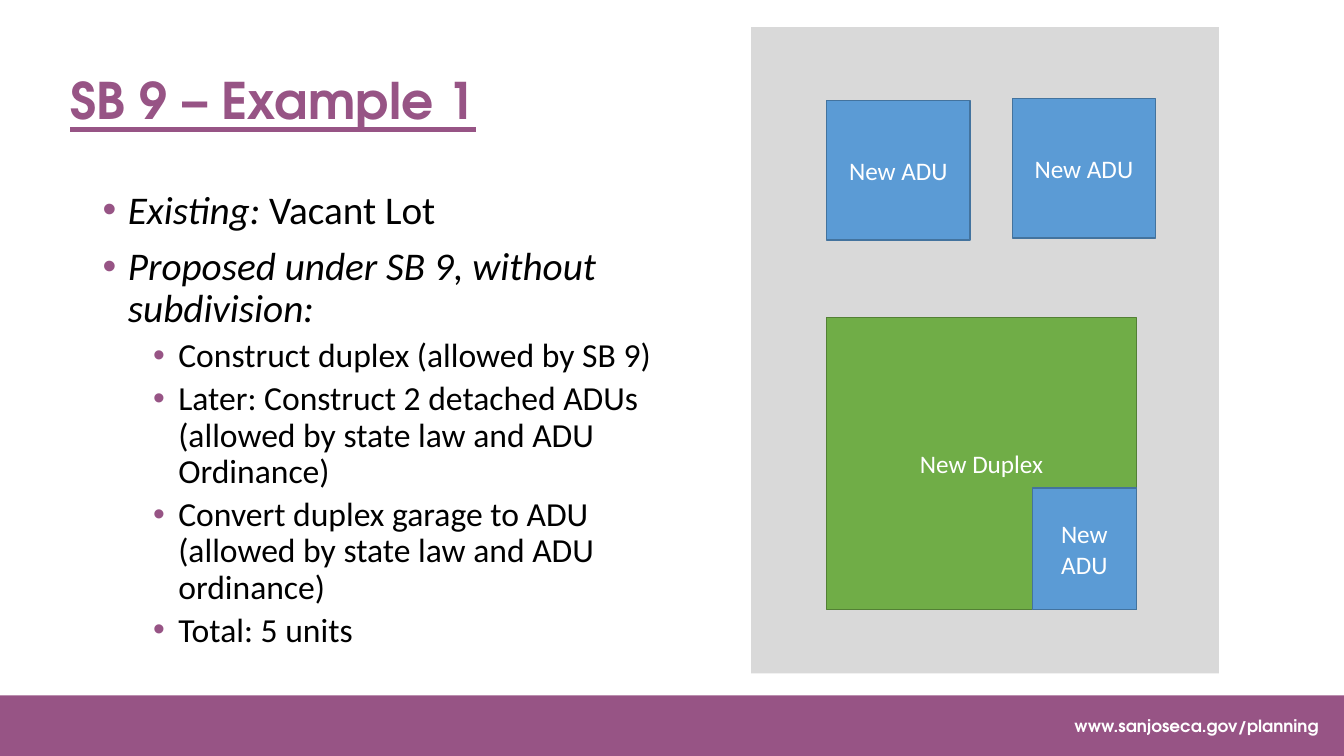
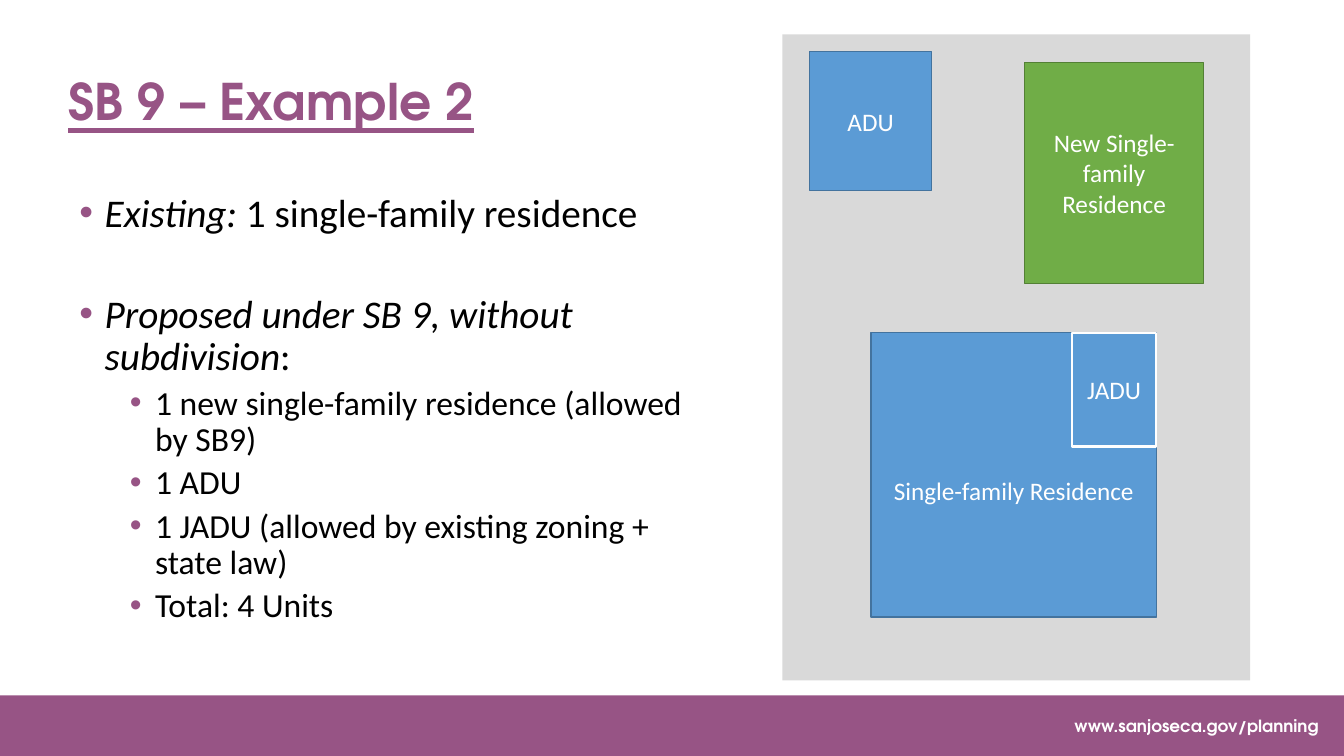
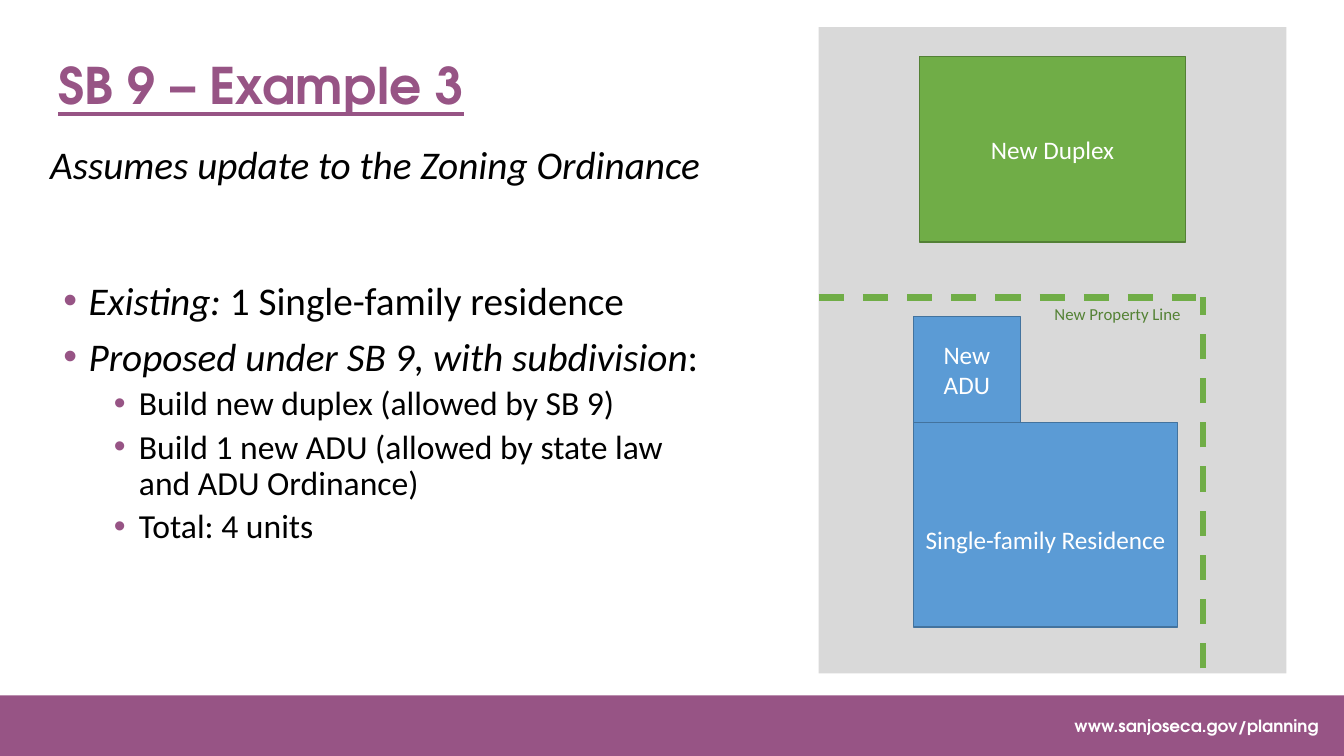
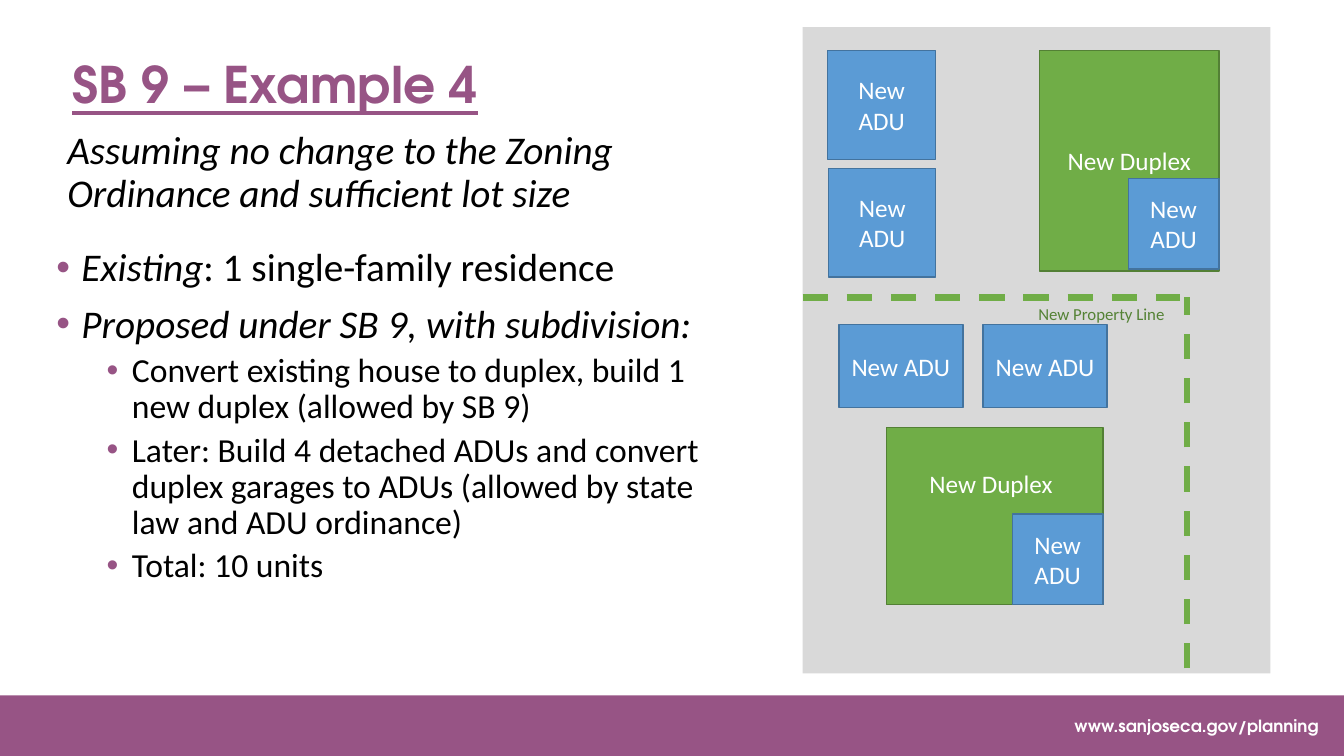
from dataclasses import dataclass

from lxml.etree import SubElement
from pptx import Presentation
from pptx.dml.color import RGBColor
from pptx.enum.dml import MSO_LINE
from pptx.enum.shapes import MSO_CONNECTOR, MSO_SHAPE
from pptx.enum.text import MSO_ANCHOR, PP_ALIGN
from pptx.oxml.ns import qn
from pptx.util import Emu, Pt

EMU_PER_PX = 9144  # 100 px to the inch
SLIDE_WIDTH, SLIDE_HEIGHT = 1333, 750
LOT_WIDTH, LOT_HEIGHT = 464, 641
TITLE_WIDTH, TITLE_HEIGHT = 464, 105
BAND_HEIGHT = 60


@dataclass(frozen=True)
class Theme:
    heading_font: str = "TeX Gyre Adventor"
    body_font: str = "Calibri"
    purple: str = "975485"
    white: str = "FFFFFF"
    black: str = "000000"
    lot: str = "D9D9D9"
    blue: str = "5B9BD5"
    blue_edge: str = "43739E"
    green: str = "70AD47"
    green_edge: str = "538035"
    green_text: str = "548235"
    title_size: int = 36
    level_sizes: tuple = (28, 24)
    label_size: int = 18
    small_size: int = 12


def px(length):
    return Emu(length * EMU_PER_PX)


def box(left, top, width, height):
    return px(left), px(top), px(width), px(height)


class Deck:
    def __init__(self, theme):
        self.theme = theme
        self.presentation = Presentation()
        self.presentation.slide_width = px(SLIDE_WIDTH)
        self.presentation.slide_height = px(SLIDE_HEIGHT)
        self.slide = None

    def start(self, title, title_at, lot_at):
        """Add a slide with its title, footer band and empty lot."""
        theme = self.theme
        layout = self.presentation.slide_layouts[6]
        self.slide = self.presentation.slides.add_slide(layout)
        heading = self.text(title, (*title_at, TITLE_WIDTH, TITLE_HEIGHT),
                            theme.title_size, theme.purple, theme.heading_font)
        heading.font.bold = heading.font.underline = True
        heading.line_spacing = 0.9
        self.slide.shapes[-1].text_frame.vertical_anchor = MSO_ANCHOR.MIDDLE

        self.rectangle((0, SLIDE_HEIGHT - BAND_HEIGHT, SLIDE_WIDTH, BAND_HEIGHT), theme.purple)
        footer = self.text("www.sanjoseca.gov/planning", (1005, 705, 313, 30),
                           theme.small_size, theme.white, theme.heading_font)
        footer.font.bold = True
        footer.alignment = PP_ALIGN.RIGHT
        self.rectangle((*lot_at, LOT_WIDTH, LOT_HEIGHT), theme.lot)

    def style(self, paragraph, size, colour, font_name=None):
        font = paragraph.font
        font.name = font_name or self.theme.body_font
        font.size = Pt(size)
        font.color.rgb = RGBColor.from_string(colour)

    def text(self, words, area, size, colour, font_name=None):
        frame = self.slide.shapes.add_textbox(*box(*area)).text_frame
        frame.word_wrap = True
        paragraph = frame.paragraphs[0]
        paragraph.text = words
        self.style(paragraph, size, colour, font_name)
        return paragraph

    def rectangle(self, area, fill, edge=None, edge_width=1):
        shape = self.slide.shapes.add_shape(MSO_SHAPE.RECTANGLE, *box(*area))
        shape.shadow.inherit = False
        shape.fill.solid()
        shape.fill.fore_color.rgb = RGBColor.from_string(fill)
        if edge:
            shape.line.color.rgb = RGBColor.from_string(edge)
            shape.line.width = Pt(edge_width)
        else:
            shape.line.fill.background()
        return shape

    def building(self, words, area, fill, edge, edge_width=1, lowered=0):
        """Draw a labelled building; lowered adds space above its label."""
        shape = self.rectangle(area, fill, edge, edge_width)
        frame = shape.text_frame
        frame.word_wrap = True
        frame.vertical_anchor = MSO_ANCHOR.MIDDLE
        frame.margin_top = px(5 + lowered)
        paragraph = frame.paragraphs[0]
        paragraph.text = words
        paragraph.alignment = PP_ALIGN.CENTER
        self.style(paragraph, self.theme.label_size, self.theme.white)

    def blue_building(self, words, *area, lowered=0):
        self.building(words, area, self.theme.blue, self.theme.blue_edge, lowered=lowered)

    def green_building(self, words, *area):
        self.building(words, area, self.theme.green, self.theme.green_edge)

    def assumption(self, words, area):
        paragraph = self.text(words, area, self.theme.level_sizes[0], self.theme.black)
        paragraph.font.italic = True
        paragraph.line_spacing = 0.9

    def bullets(self, area, existing, proposed, details, gap=10):
        """Write two main points, each an (italic, upright) pair, then the details."""
        frame = self.slide.shapes.add_textbox(*box(*area)).text_frame
        frame.word_wrap = True
        points = [(0, 10, *existing), (0, gap, *proposed)]
        points += [(1, 5, "", detail) for detail in details]
        for index, (level, space, italic, upright) in enumerate(points):
            paragraph = frame.add_paragraph() if index else frame.paragraphs[0]
            paragraph.level = level
            paragraph.line_spacing = 0.9
            paragraph.space_before = Pt(space)
            self.style(paragraph, self.theme.level_sizes[level], self.theme.black)
            self.add_bullet(paragraph, 25 + 50 * level)
            for words, slanted in ((italic, True), (upright, False)):
                if words:
                    run = paragraph.add_run()
                    run.text = words
                    run.font.italic = slanted

    def add_bullet(self, paragraph, indent):
        properties = paragraph._p.get_or_add_pPr()
        properties.set("marL", str(px(indent)))
        properties.set("indent", str(px(-25)))
        colour = properties.makeelement(qn("a:buClr"), {})
        SubElement(colour, qn("a:srgbClr"), val=self.theme.purple)
        font = properties.makeelement(qn("a:buFont"), {"typeface": "Arial"})
        character = properties.makeelement(qn("a:buChar"), {"char": "•"})
        defaults = properties.find(qn("a:defRPr"))
        for element in (colour, font, character):
            defaults.addprevious(element)

    def dashed_line(self, *ends):
        line = self.slide.shapes.add_connector(MSO_CONNECTOR.STRAIGHT, *map(px, ends))
        line.line.color.rgb = RGBColor.from_string(self.theme.green)
        line.line.width = Pt(4.5)
        line.line.dash_style = MSO_LINE.DASH
        SubElement(line._element.spPr, qn("a:effectLst"))

    def property_line(self, lot_left):
        corner = lot_left + 381
        self.dashed_line(lot_left, 295, corner - 7, 295)
        self.dashed_line(corner, 663, corner, 295)
        self.text("New Property Line", (lot_left + 224, 296, 155, 30),
                  self.theme.small_size, self.theme.green_text)


def vacant_lot(deck):
    deck.start("SB 9 – Example 1", (60, 50), (745, 27))
    deck.bullets((92, 184, 575, 476),
                 ("Existing:", " Vacant Lot"),
                 ("Proposed under SB 9, without subdivision:", ""),
                 ["Construct duplex (allowed by SB 9)",
                  "Later: Construct 2 detached ADUs (allowed by state law and ADU Ordinance)",
                  "Convert duplex garage to ADU (allowed by state law and ADU ordinance)",
                  "Total: 5 units"])
    deck.green_building("New Duplex", 820, 315, 307, 290)
    deck.blue_building("New ADU", 820, 100, 142, 138)
    deck.blue_building("New ADU", 1004, 98, 142, 138)
    deck.blue_building("New ADU", 1024, 484, 103, 121)


def added_residence(deck):
    theme = deck.theme
    deck.start("SB 9 – Example 2", (58, 51), (776, 34))
    deck.blue_building("Single-family Residence", 864, 330, 283, 282, lowered=30)
    deck.building("JADU", (1063, 330, 84, 113), theme.blue, theme.white, 1.5)
    deck.blue_building("ADU", 803, 51, 121, 138)
    deck.green_building("New Single-family Residence", 1016, 62, 178, 219)
    deck.bullets((69, 187, 636, 473),
                 ("Existing:", " 1 single-family residence"),
                 ("Proposed under SB 9, without subdivision", ":"),
                 ["1 new single-family residence (allowed by SB9)",
                  "1 ADU",
                  "1 JADU (allowed by existing zoning + state law)",
                  "Total: 4 Units"],
                 gap=42)


def subdivision_with_update(deck):
    lot_left = 812
    deck.start("SB 9 – Example 3", (48, 35), (lot_left, 27))
    deck.blue_building("Single-family Residence", 906, 419, 262, 203, lowered=30)
    deck.green_building("New Duplex", 912, 56, 264, 184)
    deck.bullets((53, 274, 658, 416),
                 ("Existing:", " 1 Single-family residence"),
                 ("Proposed under SB 9, with subdivision", ":"),
                 ["Build new duplex (allowed by SB 9)",
                  "Build 1 new ADU (allowed by state law and ADU Ordinance)",
                  "Total: 4 units"])
    deck.blue_building("New ADU", 906, 314, 106, 105)
    deck.property_line(lot_left)
    deck.assumption("Assumes update to the Zoning Ordinance", (40, 140, 730, 105))


def subdivision_without_change(deck):
    lot_left = 796
    deck.start("SB 9 – Example 4", (62, 34), (lot_left, 27))
    deck.bullets((46, 241, 705, 449),
                 ("Existing", ": 1 single-family residence"),
                 ("Proposed under SB 9, with subdivision:", ""),
                 ["Convert existing house to duplex, build 1 new duplex (allowed by SB 9)",
                  "Later: Build 4 detached ADUs and convert duplex garages to ADUs "
                  "(allowed by state law and ADU ordinance)",
                  "Total: 10 units"])
    deck.blue_building("New ADU", 821, 50, 107, 108)
    deck.blue_building("New ADU", 822, 167, 106, 108)
    deck.green_building("New Duplex", 1031, 50, 178, 219)
    deck.blue_building("New ADU", 1119, 177, 90, 90)
    deck.property_line(lot_left)
    deck.assumption("Assuming no change to the Zoning Ordinance and sufficient lot size",
                    (57, 125, 654, 105))
    deck.rectangle((879, 424, 215, 176), deck.theme.green, deck.theme.green_edge)
    deck.blue_building("New ADU", 1004, 510, 90, 90)
    deck.text("New Duplex", (912, 460, 150, 40), deck.theme.label_size, deck.theme.white)
    for left in (832, 975):
        deck.blue_building("New ADU", left, 322, 123, 82)


def main():
    deck = Deck(Theme())
    vacant_lot(deck)
    added_residence(deck)
    subdivision_with_update(deck)
    subdivision_without_change(deck)
    deck.presentation.save("out.pptx")


if __name__ == "__main__":
    main()
